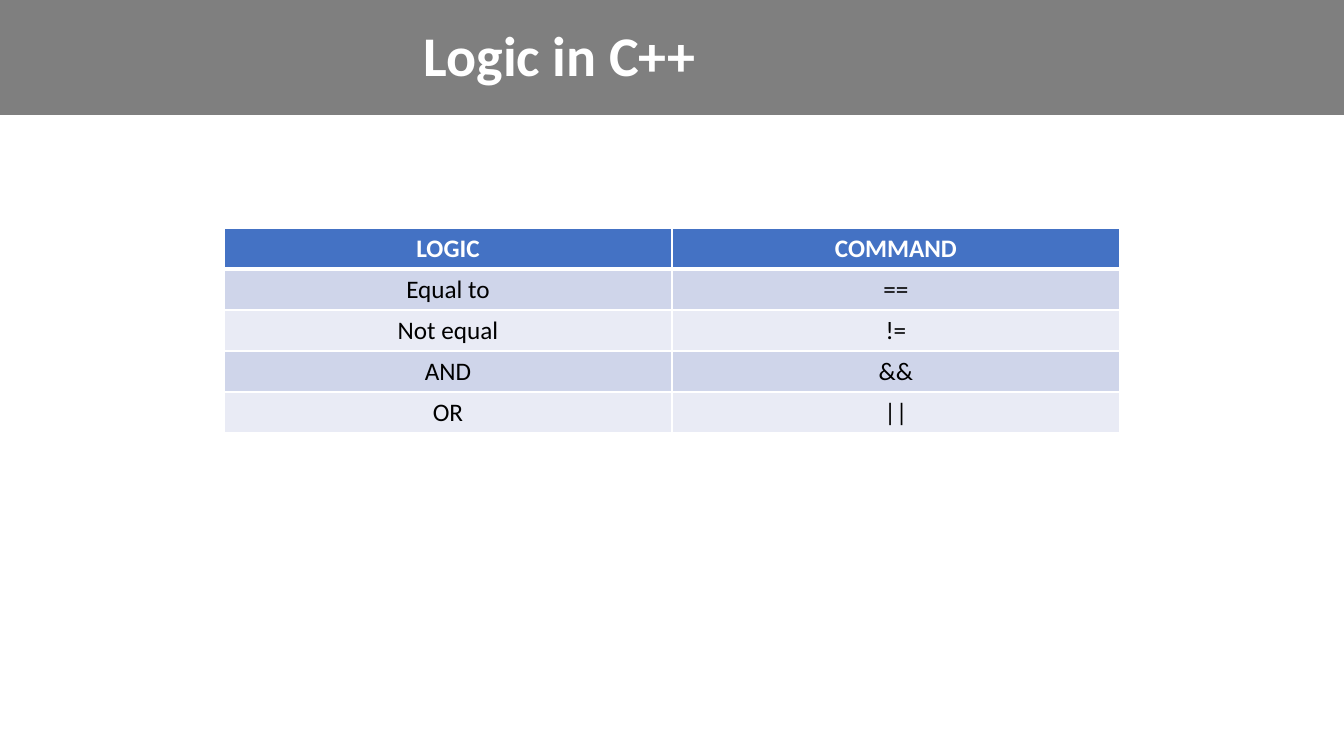
import lxml.etree
import pptx
import pptx.dml.color
import pptx.enum.shapes
import pptx.enum.text
import pptx.oxml.ns
import pptx.util

EMU_PER_PX = 12192000 / 1344
CENTER = pptx.enum.text.PP_ALIGN.CENTER
MIDDLE = pptx.enum.text.MSO_ANCHOR.MIDDLE


def px(*lengths):
    """Turn pixel lengths into a list of EMU lengths."""
    return [pptx.util.Emu(round(length * EMU_PER_PX)) for length in lengths]


def paint(color_owner, color):
    """Give a fill or a font a solid hex colour and return its colour XML parent."""
    fill = getattr(color_owner, "fill", color_owner)
    fill.solid()
    fill.fore_color.rgb = pptx.dml.color.RGBColor.from_string(color)


presentation = pptx.Presentation()
presentation.slide_width, presentation.slide_height = px(1344, 756)
slide = presentation.slides.add_slide(presentation.slide_layouts[5])
qn = pptx.oxml.ns.qn

# Translucent header band behind the title
band = slide.shapes.add_shape(
    pptx.enum.shapes.MSO_SHAPE.RECTANGLE, *px(-3, -2, 1348, 117))
band.shadow.inherit = False
band.line.fill.background()
paint(band, "000000")
black = band.fill._xPr.find(".//" + qn("a:srgbClr"))
lxml.etree.SubElement(black, qn("a:alpha"), val="50000")
slide.shapes._spTree.insert(2, band._element)

# Title
title = slide.shapes.title
title.left, title.top, title.width, title.height = px(22, 12, 1075, 92)
title.text_frame.text = "Logic in C++"
title.text_frame.vertical_anchor = MIDDLE
title.text_frame.auto_size = pptx.enum.text.MSO_AUTO_SIZE.NONE
heading = title.text_frame.paragraphs[0]
heading.alignment = CENTER
heading.line_spacing = 0.9
title_format = {"name": "Calibri", "size": pptx.util.Pt(40), "bold": True}
for attribute, value in title_format.items():
    setattr(heading.font, attribute, value)
paint(heading.font, "FFFFFF")

# Table of logic operators
operators = [
    ("LOGIC", "COMMAND"),
    ("Equal to", "=="),
    ("Not equal", "!="),
    ("AND", "&&"),
    ("OR", "||"),
]
table = slide.shapes.add_table(
    len(operators), 2, *px(224, 228, 896, 41 * len(operators))).table

for row, entries in enumerate(operators):
    is_header = row == 0
    row_fill = "4472C4" if is_header else ("E9EBF5", "CFD5EA")[row % 2]
    border_widths = {"L": 1, "R": 1, "T": 3 if row == 1 else 1, "B": 3 if is_header else 1}
    cell_format = {"name": "Calibri", "size": pptx.util.Pt(18), "bold": is_header}
    for column, entry in enumerate(entries):
        cell = table.cell(row, column)
        cell.text = entry
        paragraph = cell.text_frame.paragraphs[0]
        paragraph.alignment = CENTER
        for attribute, value in cell_format.items():
            setattr(paragraph.font, attribute, value)
        paint(paragraph.font, "FFFFFF" if is_header else "000000")

        properties = cell._tc.get_or_add_tcPr()
        for side, width in border_widths.items():
            border = lxml.etree.SubElement(
                properties, qn("a:ln" + side), w=str(pptx.util.Pt(width)))
            solid = lxml.etree.SubElement(border, qn("a:solidFill"))
            lxml.etree.SubElement(solid, qn("a:srgbClr"), val="FFFFFF")
        paint(cell, row_fill)

presentation.save("out.pptx")
